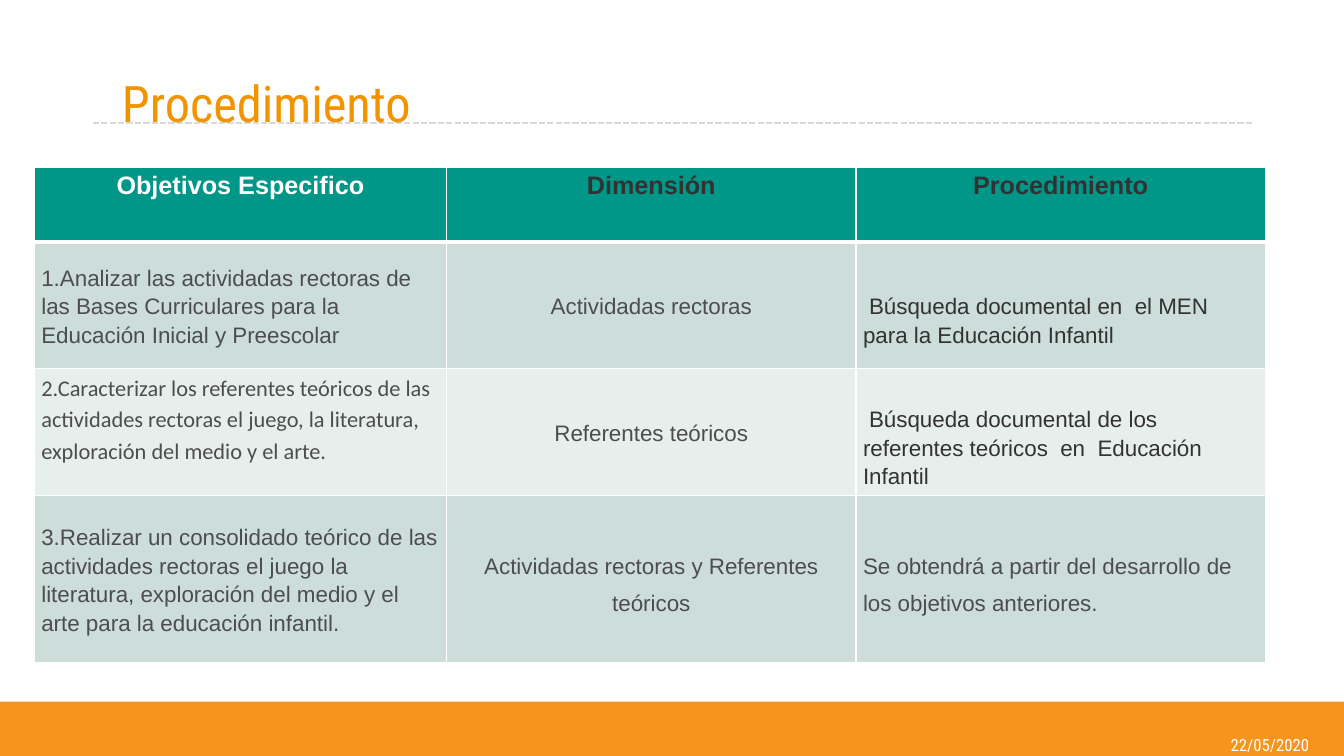
from lxml.etree import SubElement
from pptx import Presentation
from pptx.dml.color import RGBColor
from pptx.enum.dml import MSO_LINE
from pptx.enum.shapes import MSO_CONNECTOR, MSO_SHAPE
from pptx.enum.text import MSO_ANCHOR as Anchor, PP_ALIGN as Align
from pptx.oxml.ns import qn
from pptx.util import Inches, Pt

WHITE, DARK, GRAY = "FFFFFF", "333232", "4D4D4F"


def color(hex_value):
    return RGBColor.from_string(hex_value)


def format_paragraph(paragraph, font_name, size, hex_value, align=Align.LEFT, bold=False):
    paragraph.alignment = align
    font = paragraph.font
    font.name, font.size, font.bold = font_name, Pt(size), bold
    font.color.rgb = color(hex_value)


presentation = Presentation()
presentation.slide_width, presentation.slide_height = Inches(13.33), Inches(7.5)
slide = presentation.slides.add_slide(presentation.slide_layouts[5])
shapes = slide.shapes

# Footer band and date
band = shapes.add_shape(MSO_SHAPE.RECTANGLE, 0, Inches(6.96), Inches(13.33), Inches(0.54))
band.shadow.inherit = False
band.fill.solid()
band.fill.fore_color.rgb = color("F7941D")
band.line.fill.background()

date = shapes.add_textbox(Inches(11.89), Inches(7.28), Inches(1.41), Inches(0.21))
date_frame = date.text_frame
date_frame.word_wrap = True
date_frame.vertical_anchor = Anchor.MIDDLE
date_frame.margin_top = date_frame.margin_bottom = 0
date_frame.text = "22/05/2020"
format_paragraph(date_frame.paragraphs[0], "Roboto Condensed", 12, WHITE, Align.CENTER)

# Dashed rule with the title in front of it
rule = shapes.add_connector(
    MSO_CONNECTOR.STRAIGHT, Inches(0.92), Inches(1.22), Inches(12.42), Inches(1.22))
rule.line.color.rgb = color("D9D9D9")
rule.line.width = Pt(1.5)
rule.line.dash_style = MSO_LINE.SQUARE_DOT
SubElement(rule.element.spPr, qn("a:effectLst"))

title = shapes.title
title.left, title.top, title.width, title.height = (
    Inches(1.11), Inches(0.48), Inches(11.5), Inches(1.07))
title.text_frame.text = "Procedimiento"
title.text_frame.vertical_anchor = Anchor.MIDDLE
format_paragraph(title.text_frame.paragraphs[0], "Roboto Condensed", 36, "F29400")
title.element.getparent().append(title.element)

# Table contents
rows = [
    ["Objetivos Especifico", "Dimensión", "Procedimiento"],
    ["1.Analizar las actividadas rectoras de las Bases Curriculares para la "
     "Educación Inicial y Preescolar",
     "Actividadas rectoras",
     "Búsqueda documental en  el MEN para la Educación Infantil"],
    ["2.Caracterizar los referentes teóricos de las actividades rectoras el juego, "
     "la literatura, exploración del medio y el arte.",
     "Referentes teóricos",
     "Búsqueda documental de los referentes teóricos  en  Educación Infantil"],
    ["3.Realizar un consolidado teórico de las actividades rectoras el juego la "
     "literatura, exploración del medio y el arte para la educación infantil.",
     "Actividadas rectoras y Referentes teóricos",
     "Se obtendrá a partir del desarrollo de los objetivos anteriores."],
]
column_widths = [4.09, 4.06, 4.06]
row_heights = [0.74, 1.26, 1.26, 1.65]
row_fills = ["009688", "CCDDDA", "E7EFED", "CCDDDA"]

table = shapes.add_table(
    len(rows), len(column_widths), Inches(0.34), Inches(1.66),
    Inches(sum(column_widths)), Inches(sum(row_heights))).table
for column, width in zip(table.columns, column_widths):
    column.width = Inches(width)

for row_index, texts in enumerate(rows):
    table.rows[row_index].height = Inches(row_heights[row_index])
    header = row_index == 0
    for column_index, text in enumerate(texts):
        cell = table.cell(row_index, column_index)
        cell.margin_left = cell.margin_right = Inches(0.07)
        cell.margin_top = cell.margin_bottom = 0
        cell.vertical_anchor = Anchor.TOP if header else Anchor.MIDDLE

        # White borders, heavier under the header
        properties = cell._tc.get_or_add_tcPr()
        for side in ("L", "R", "T", "B"):
            heavy = (row_index, side) in ((0, "B"), (1, "T"))
            border = SubElement(properties, qn(f"a:ln{side}"), w=str(Pt(3 if heavy else 1)))
            SubElement(SubElement(border, qn("a:solidFill")), qn("a:srgbClr"), val=WHITE)
        cell.fill.solid()
        cell.fill.fore_color.rgb = color(row_fills[row_index])

        cell.text = text
        paragraph = cell.text_frame.paragraphs[0]
        paragraph.line_spacing = 1.5 if row_index == 3 and column_index > 0 else 1.15
        align = Align.CENTER if header or column_index == 1 else Align.LEFT
        search_cell = column_index == 2 and row_index in (1, 2)
        calibri_cell = (row_index, column_index) == (2, 0)
        if search_cell:
            cell.margin_top = Inches(0.28)
            paragraph._p.get_or_add_pPr().set("indent", str(Inches(0.06)))
        if calibri_cell:
            cell.margin_bottom = Inches(0.28)
        if header:
            text_color = DARK if column_index else WHITE
        else:
            text_color = DARK if search_cell else GRAY
        format_paragraph(paragraph, "Calibri" if calibri_cell else "Arial",
                         18 if header else 16, text_color, align, header)

presentation.save("out.pptx")
